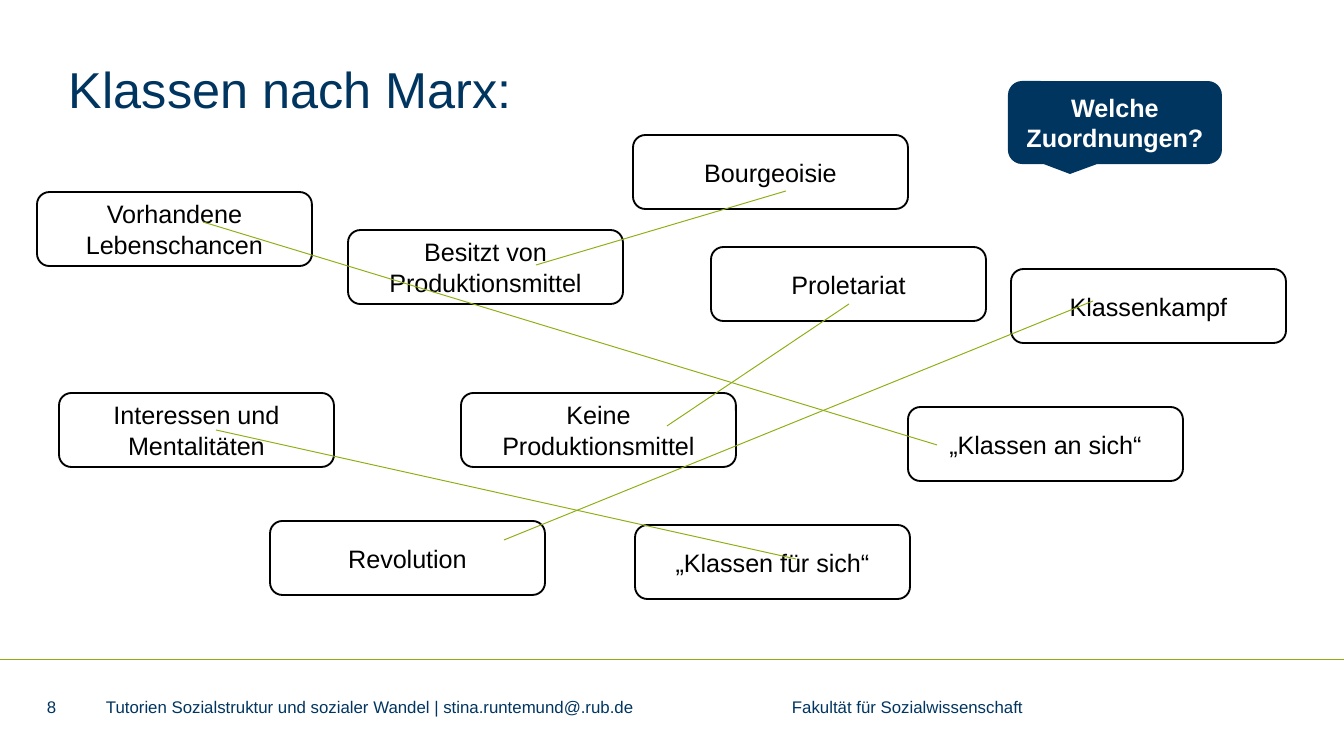
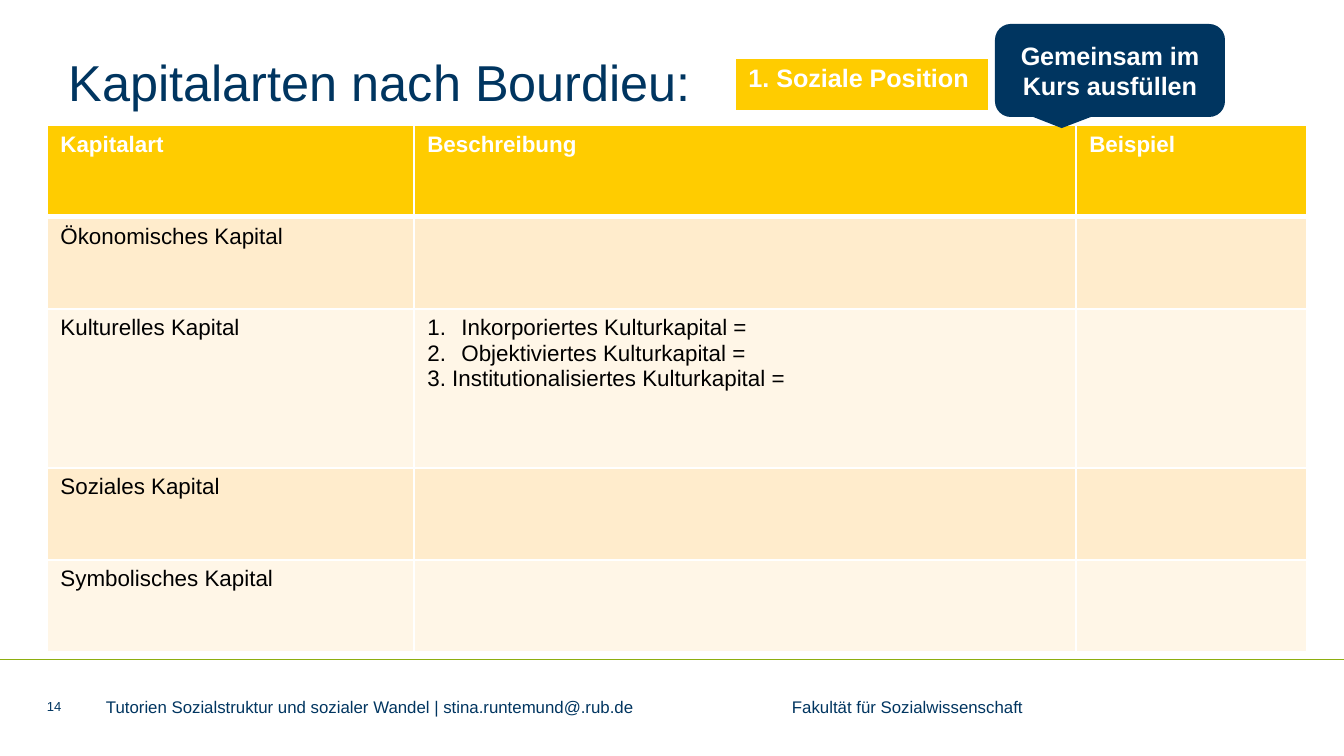
"""Builds two tutorial slides on class theory (Marx) and forms of capital (Bourdieu)."""
from lxml.etree import SubElement
from pptx import Presentation
from pptx.dml.color import RGBColor
from pptx.enum.shapes import MSO_CONNECTOR as Connector, MSO_SHAPE as Preset
from pptx.enum.text import MSO_ANCHOR as Anchor, PP_ALIGN as Align
from pptx.oxml.ns import qn
from pptx.util import Pt

COLORS = {
    "navy": "003560", "green": "8DAE10", "yellow": "FFCC00", "dark_row": "FFECCC",
    "light_row": "FFF6E7", "white": "FFFFFF", "black": "000000",
}
FONT = "Arial"
SLIDE_SIZE = (1344, 756)
FOOTER = "Tutorien Sozialstruktur und sozialer Wandel | stina.runtemund@.rub.de\tFakultät für Sozialwissenschaft"
FOOTER_TAB = 686

MARX = {
    "title": "Klassen nach Marx:",
    "number": "8",
    "callout": ("Welche Zuordnungen?", (1008, 81, 214, 83)),
}
TERM_SIZE = (275, 74)
TERMS = [
    ("Proletariat", 711, 247),
    ("Bourgeoisie", 633, 135),
    ("Besitzt von Produktionsmittel", 348, 230),
    ("Keine Produktionsmittel", 461, 393),
    ("Vorhandene Lebenschancen", 37, 192),
    ("Interessen und Mentalitäten", 59, 393),
    ("„Klassen an sich“", 908, 407),
    ("„Klassen für sich“", 635, 525),
    ("Revolution", 270, 521),
    ("Klassenkampf", 1011, 269),
]
MATCHES = [
    ((536, 265), (786, 191)),
    ((849, 304), (667, 426)),
    ((1093, 301), (504, 540)),
    ((796, 559), (216, 430)),
    ((937, 445), (203, 222)),
]

BOURDIEU = {
    "title": "Kapitalarten nach Bourdieu:",
    "number": "14",
    "callout": ("Gemeinsam im Kurs ausfüllen", (995, 24, 230, 93)),
}
TOPIC = [["1. Soziale Position"]]
CULTURAL = [
    "Inkorporiertes Kulturkapital =",
    "Objektiviertes Kulturkapital =",
    "3. Institutionalisiertes Kulturkapital =",
]
CAPITAL = [
    ["Kapitalart", "Beschreibung", "Beispiel"],
    ["Ökonomisches Kapital", "", ""],
    ["Kulturelles Kapital", CULTURAL, ""],
    ["Soziales Kapital", "", ""],
    ["Symbolisches Kapital", "", ""],
]
CAPITAL_COLUMNS = [367, 662, 231]
CAPITAL_ROWS = [92, 92, 159, 92, 92]


def px(value):
    return round(value * 914400 / 134.4)


def color(name):
    return RGBColor.from_string(COLORS[name])


def write(frame, text, size=13.5, ink="black", bold=False, align=Align.LEFT,
          spacing=None, after=None, tab=None, numbered=0):
    frame.word_wrap = True
    lines = [text] if isinstance(text, str) else text
    for index, line in enumerate(lines):
        paragraph = frame.add_paragraph() if index else frame.paragraphs[0]
        properties = paragraph._p.get_or_add_pPr()
        if index < numbered:
            properties.set("marL", str(px(34)))
            properties.set("indent", str(-px(34)))
            SubElement(properties, qn("a:buAutoNum"), type="arabicPeriod")
        if tab:
            stops = SubElement(properties, qn("a:tabLst"))
            SubElement(stops, qn("a:tab"), pos=str(px(tab)), algn="l")
        paragraph.alignment = align
        if spacing:
            paragraph.line_spacing = spacing
        if after:
            paragraph.space_after = Pt(after)
        if line:
            run = paragraph.add_run()
            run.text = line
            run.font.name = FONT
            run.font.size = Pt(size)
            run.font.bold = bold
            run.font.color.rgb = color(ink)


def add_label(slide, text, box, anchor=Anchor.MIDDLE, **style):
    frame = slide.shapes.add_textbox(*map(px, box)).text_frame
    frame.margin_left = frame.margin_top = frame.margin_right = frame.margin_bottom = 0
    frame.vertical_anchor = anchor
    write(frame, text, **style)


def add_box(slide, preset, text, box, fill, line=None, **style):
    shape = slide.shapes.add_shape(preset, *map(px, box))
    shape.shadow.inherit = False
    shape.fill.solid()
    shape.fill.fore_color.rgb = color(fill)
    if line:
        shape.line.color.rgb = color(line)
        shape.line.width = Pt(1)
    else:
        shape.line.fill.background()
    shape.text_frame.vertical_anchor = Anchor.MIDDLE
    write(shape.text_frame, text, align=Align.CENTER, **style)
    return shape


def add_line(slide, start, end):
    line = slide.shapes.add_connector(Connector.STRAIGHT, *map(px, start + end))
    line.line.color.rgb = color("green")
    line.line.width = Pt(0.5)
    SubElement(line._element.spPr, qn("a:effectLst"))


def set_borders(cell, widths):
    properties = cell._tc.get_or_add_tcPr()
    for position, (side, width) in enumerate(widths.items()):
        border = properties.makeelement(qn(f"a:ln{side}"), {"w": str(Pt(width))})
        fill = SubElement(border, qn("a:solidFill"))
        SubElement(fill, qn("a:srgbClr"), val=COLORS["white"])
        properties.insert(position, border)


def add_grid(slide, content, corner, columns, rows, size):
    box = (*corner, sum(columns), sum(rows))
    table = slide.shapes.add_table(len(rows), len(columns), *map(px, box)).table
    table.first_row = table.horz_banding = False
    for column, width in zip(table.columns, columns):
        column.width = px(width)
    for index, (row, height) in enumerate(zip(table.rows, rows)):
        row.height = px(height)
        header = index == 0
        fill = "yellow" if header else "dark_row" if index % 2 else "light_row"
        for cell, text in zip(row.cells, content[index]):
            cell.fill.solid()
            cell.fill.fore_color.rgb = color(fill)
            set_borders(cell, {"L": 1, "R": 1, "T": 3 if index == 1 else 1, "B": 3 if header else 1})
            write(cell.text_frame, text, size=size, bold=header,
                  ink="white" if header else "black", numbered=2 if text is CULTURAL else 0)


def add_slide(presentation, content, number_size=9, spacing=None, after=None):
    slide = presentation.slides.add_slide(presentation.slide_layouts[6])
    add_line(slide, (0, 660), (1344, 660))
    add_label(slide, content["title"], (69, 58, 1111, 69), anchor=Anchor.TOP,
              size=27, ink="navy", spacing=spacing)
    add_label(slide, FOOTER, (106, 699, 926, 16), size=9, ink="navy", tab=FOOTER_TAB)
    add_label(slide, content["number"], (47, 699, 38, 16), size=number_size, ink="navy",
              spacing=spacing, after=after)
    return slide


def add_callout(slide, content):
    text, box = content["callout"]
    callout = add_box(slide, Preset.ROUNDED_RECTANGULAR_CALLOUT, text, box, "navy",
                      ink="white", bold=True)
    for index, value in enumerate((-0.21, 0.62, 0.17)):
        callout.adjustments[index] = value


def build_marx(presentation):
    slide = add_slide(presentation, MARX)
    for text, left, top in TERMS:
        add_box(slide, Preset.ROUNDED_RECTANGLE, text, (left, top, *TERM_SIZE), "white", line="black")
    add_callout(slide, MARX)
    for start, end in MATCHES:
        add_line(slide, start, end)


def build_bourdieu(presentation):
    slide = add_slide(presentation, BOURDIEU, number_size=7, spacing=0.9, after=6)
    add_grid(slide, TOPIC, (735, 58), [254], [55], size=13.5)
    add_grid(slide, CAPITAL, (47, 125), CAPITAL_COLUMNS, CAPITAL_ROWS, size=12)
    add_callout(slide, BOURDIEU)


def main():
    presentation = Presentation()
    presentation.slide_width, presentation.slide_height = map(px, SLIDE_SIZE)
    build_marx(presentation)
    build_bourdieu(presentation)
    presentation.save("out.pptx")


if __name__ == "__main__":
    main()
